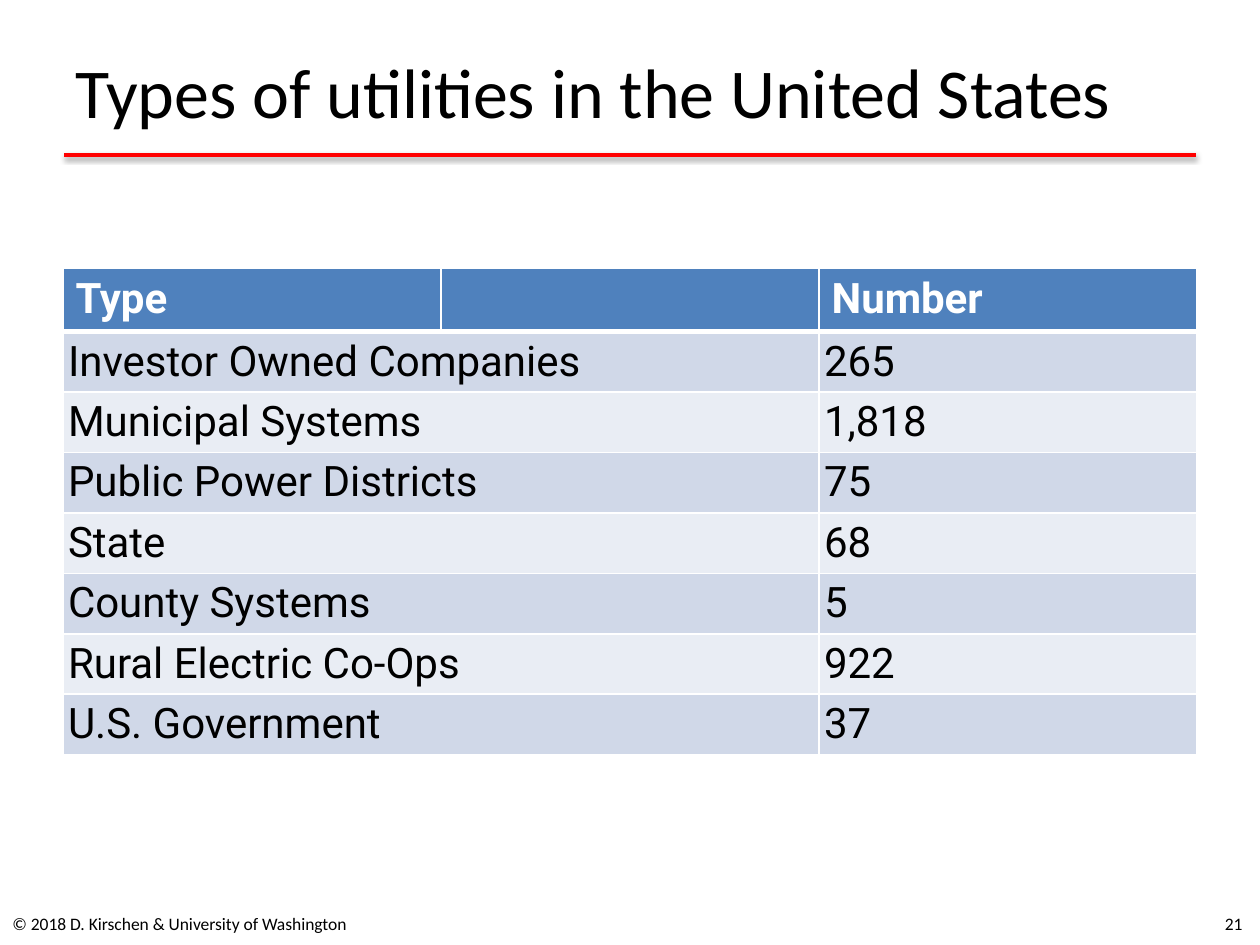
"""Build the slide listing the types of utilities in the United States."""
from dataclasses import dataclass

from lxml import etree
from pptx import Presentation
from pptx.dml.color import RGBColor
from pptx.enum.shapes import MSO_CONNECTOR
from pptx.enum.text import MSO_ANCHOR, PP_ALIGN
from pptx.oxml.ns import qn
from pptx.util import Pt

STRAIGHT = MSO_CONNECTOR.STRAIGHT
MIDDLE, TOP = MSO_ANCHOR.MIDDLE, MSO_ANCHOR.TOP
LEFT, RIGHT = PP_ALIGN.LEFT, PP_ALIGN.RIGHT

BLACK = RGBColor(0x00, 0x00, 0x00)
WHITE = RGBColor(0xFF, 0xFF, 0xFF)
RED = RGBColor(0xFF, 0x00, 0x00)
HEADER_BLUE = RGBColor(0x4F, 0x81, 0xBD)
BANDS = (RGBColor(0xD0, 0xD8, 0xE8), RGBColor(0xE9, 0xED, 0xF4))

COLUMN_WIDTH = 216
ROW_HEIGHT = 29.16
BODY_INSET = Pt(2.88)
THIN, THICK = 1, 3


@dataclass
class Label:
    """A line of text in its box, in points."""
    text: str
    left: float
    top: float
    width: float
    height: float
    size: float
    alignment: PP_ALIGN = LEFT


@dataclass
class Utility:
    """A type of utility and how many there are."""
    name: str
    number: str


LABELS = (
    Label("Types of utilities in the United States", 36, 9.36, 648, 84.24, 40),
    Label("© 2018 D. Kirschen & University of Washington", 0, 513.36, 235.44, 28.8, 10),
    Label("21", 549.36, 513.36, 167.76, 28.8, 10, RIGHT),
)

UTILITIES = (
    Utility("Investor Owned Companies", "265"),
    Utility("Municipal Systems", "1,818"),
    Utility("Public Power Districts", "75"),
    Utility("State", "68"),
    Utility("County Systems", "5"),
    Utility("Rural Electric Co-Ops", "922"),
    Utility("U.S. Government", "37"),
)


def format_text(text_frame, font_name: str, size: float, color: RGBColor, bold: bool = False) -> None:
    """Give every run of a text frame the same font."""
    for paragraph in text_frame.paragraphs:
        for run in paragraph.runs:
            run.font.name = font_name
            run.font.size = Pt(size)
            run.font.bold = bold
            run.font.color.rgb = color


def add_label(slide, label: Label) -> None:
    """Add one vertically centred text box."""
    shape = slide.shapes.add_textbox(Pt(label.left), Pt(label.top), Pt(label.width), Pt(label.height))
    text_frame = shape.text_frame
    text_frame.word_wrap = True
    text_frame.vertical_anchor = MIDDLE
    text_frame.text = label.text
    text_frame.paragraphs[0].alignment = label.alignment
    format_text(text_frame, "Calibri", label.size, BLACK)


def add_title_rule(slide) -> None:
    """Add the red line under the title, with its soft shadow."""
    rule = slide.shapes.add_connector(STRAIGHT, Pt(36.72), Pt(88.56), Pt(683.28), Pt(88.56))
    rule.line.color.rgb = RED
    rule.line.width = Pt(2)
    effects = etree.SubElement(rule._element.spPr, qn("a:effectLst"))
    shadow = etree.SubElement(effects, qn("a:outerShdw"), blurRad=str(Pt(3.1)), dist=str(Pt(1.6)),
                              dir="5400000", rotWithShape="0")
    color = etree.SubElement(shadow, qn("a:srgbClr"), val=str(BLACK))
    etree.SubElement(color, qn("a:alpha"), val="38000")


def set_borders(cell, top: float, bottom: float) -> None:
    """Draw white borders round a cell, thin at the sides."""
    properties = cell._tc.get_or_add_tcPr()
    widths = {"a:lnL": THIN, "a:lnR": THIN, "a:lnT": top, "a:lnB": bottom}
    for position, (tag, width) in enumerate(widths.items()):
        line = etree.Element(qn(tag), w=str(Pt(width)))
        fill = etree.SubElement(line, qn("a:solidFill"))
        etree.SubElement(fill, qn("a:srgbClr"), val=str(WHITE))
        properties.insert(position, line)


def fill_cell(cell, text: str, row: int) -> None:
    """Write a cell and style it as header or banded body."""
    is_header = row == 0
    cell.fill.solid()
    cell.fill.fore_color.rgb = HEADER_BLUE if is_header else BANDS[(row - 1) % 2]
    set_borders(cell, THICK if row == 1 else THIN, THICK if is_header else THIN)
    cell.vertical_anchor = TOP if is_header else MIDDLE
    if not is_header:
        cell.margin_left = cell.margin_right = BODY_INSET
        cell.margin_top = cell.margin_bottom = BODY_INSET
    cell.text_frame.text = text
    format_text(cell.text_frame, "Roboto", 24, WHITE if is_header else BLACK, is_header)


def add_utility_table(slide) -> None:
    """Add the table, each utility's name spanning two columns."""
    rows = [("Type", "", "Number")] + [(utility.name, "", utility.number) for utility in UTILITIES]
    frame = slide.shapes.add_table(len(rows), 3, Pt(36), Pt(153.36),
                                   Pt(3 * COLUMN_WIDTH), Pt(len(rows) * ROW_HEIGHT))
    table = frame.table
    table.first_row = False
    table.horz_banding = False
    for row, texts in enumerate(rows):
        for column, text in enumerate(texts):
            fill_cell(table.cell(row, column), text, row)
        if row > 0:
            table.cell(row, 0).merge(table.cell(row, 1))


def main() -> None:
    """Build and save the presentation."""
    presentation = Presentation()
    presentation.slide_width = Pt(720)
    presentation.slide_height = Pt(540)
    slide = presentation.slides.add_slide(presentation.slide_layouts[6])
    add_title_rule(slide)
    for label in LABELS:
        add_label(slide, label)
    add_utility_table(slide)
    presentation.save("out.pptx")


if __name__ == "__main__":
    main()
